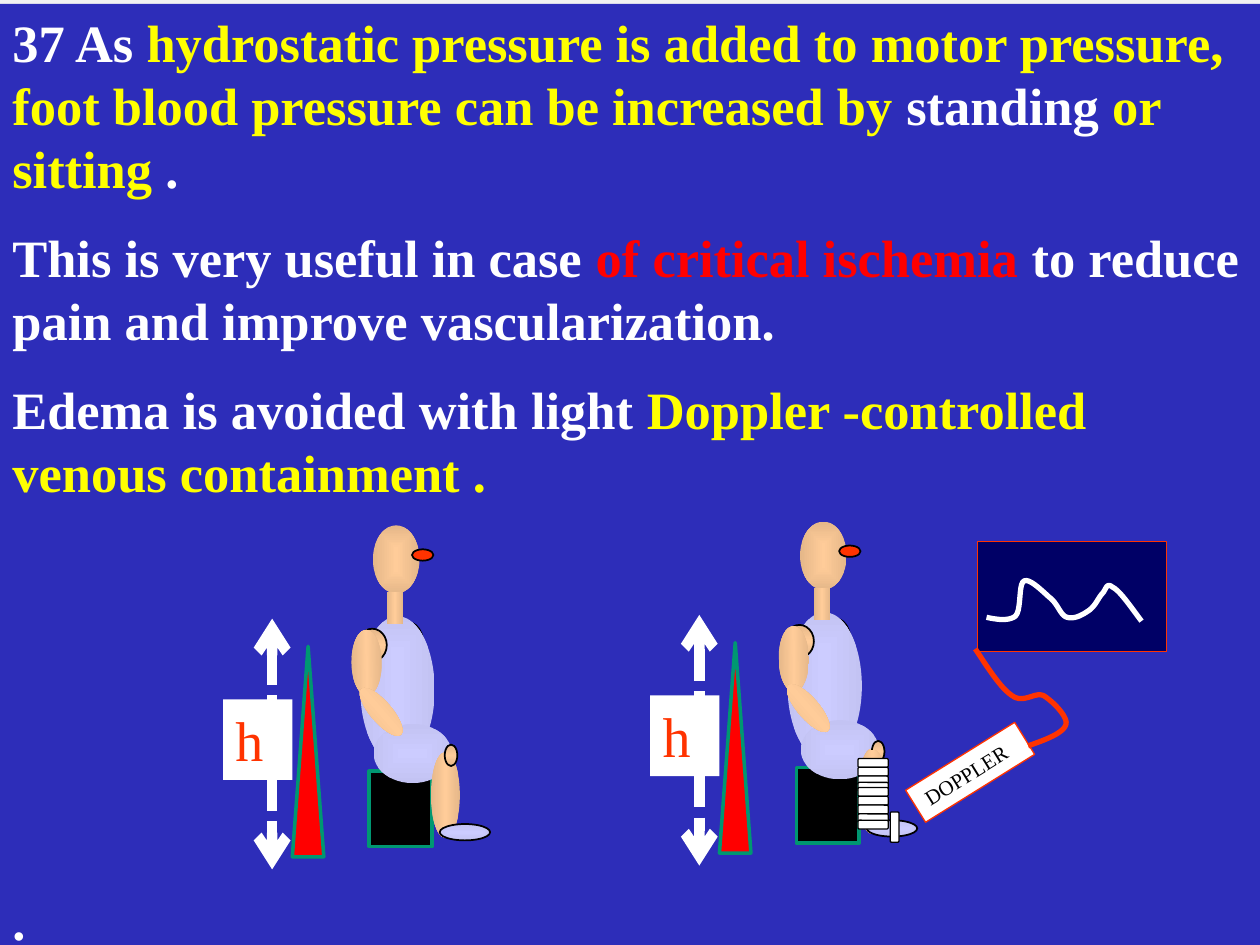
from pptx import Presentation
from pptx.dml.color import RGBColor
from pptx.enum import dml, shapes, text
from pptx.oxml import parse_xml
from pptx.oxml.ns import qn
from pptx.util import Cm, Pt

NS = 'xmlns:a="http://schemas.openxmlformats.org/drawingml/2006/main"'
INCH = 2.54
FONT = "Times New Roman"
HEX = {"page": "F2F2F2", "blue": "2D2DB9", "white": "FFFFFF", "yellow": "FFFF00",
       "red": "FF0000", "flame": "FF3300", "black": "000000", "green": "009771",
       "mint": "00CC99", "navy": "000066", "skin": "FFCC99", "tan": "E5B789",
       "lilac": "CCCCFF", "mauve": "C3C3F3"}
RGB = {name: RGBColor.from_string(code) for name, code in HEX.items()}

# Gradients: colour stops, then the way they run
ACROSS, DOWN = '<a:lin ang="0" scaled="1"/>', '<a:lin ang="5400000" scaled="1"/>'
ROUND = ('<a:path path="shape"><a:fillToRect l="50000" t="50000" '
         'r="50000" b="50000"/></a:path>')
GRADS = {"limb": (["tan", "skin", "tan"], ACROSS),
         "joint": (["tan", "skin", "tan"], DOWN),
         "face": (["skin", "tan"], ROUND),
         "cloth": (["lilac", "mauve"], ROUND)}

KIND = shapes.MSO_SHAPE
RECT, OVAL, BAND = KIND.RECTANGLE, KIND.OVAL, KIND.ROUNDED_RECTANGLE


def part(home, kind, box, fill, line=None, width=1, turn=0, word=None, size=12, ink="black"):
    """Add a shape; box is left, top, width, height in inches."""
    item = home.add_shape(kind, *[Cm(v * INCH) for v in box])
    item.shadow.inherit = False
    item.rotation = turn
    if fill in GRADS:
        names, way = GRADS[fill]
        stops = "".join(
            f'<a:gs pos="{100000 * i // (len(names) - 1)}"><a:srgbClr val="{HEX[n]}"/></a:gs>'
            for i, n in enumerate(names))
        item.fill.background()
        prop = item._element.spPr
        prop.replace(prop.find(qn("a:noFill")), parse_xml(
            f'<a:gradFill {NS} rotWithShape="1"><a:gsLst>{stops}</a:gsLst>{way}</a:gradFill>'))
    elif fill == "stripes":
        item.fill.patterned()
        item.fill.pattern = dml.MSO_PATTERN.DARK_HORIZONTAL
        item.fill.fore_color.rgb, item.fill.back_color.rgb = RGB["mint"], RGB["white"]
    else:
        item.fill.solid()
        item.fill.fore_color.rgb = RGB[fill]
    if line:
        item.line.color.rgb = RGB[line]
        item.line.width = Pt(width)
    else:
        item.line.fill.background()
    if word:
        frame = item.text_frame
        frame.word_wrap = False
        frame.vertical_anchor = text.MSO_ANCHOR.TOP
        para = frame.paragraphs[0]
        para.alignment = text.PP_ALIGN.LEFT
        run = para.add_run()
        run.text = word
        run.font.name, run.font.size, run.font.color.rgb = FONT, Pt(size), RGB[ink]
    return item


def curve(home, start, bends, line, fill=None):
    """Draw an open outline through cubic bends, each two controls and an end."""
    dots = []
    here = start
    for one, two, end in bends:
        for step in range(1, 11):
            t = step / 10
            s = 1 - t
            dots.append([Cm(INCH * (s**3 * a + 3 * s * s * t * b + 3 * s * t * t * c + t**3 * d))
                         for a, b, c, d in zip(here, one, two, end)])
        here = end
    pen = home.build_freeform(*[Cm(v * INCH) for v in start])
    pen.add_line_segments(dots, close=False)
    item = pen.convert_to_shape()
    item.shadow.inherit = False
    item.line.color.rgb = RGB[line]
    item.line.width = Pt(3)
    if fill:
        item.fill.solid()
        item.fill.fore_color.rgb = RGB[fill]
    else:
        item.fill.background()


deck = Presentation()
deck.slide_width, deck.slide_height = Cm(25.4), Cm(19.05)
slide = deck.slides.add_slide(deck.slide_layouts[6])
slide.background.fill.solid()
slide.background.fill.fore_color.rgb = RGB["page"]
top = slide.shapes

# Blue panel with the message
panel = part(top, RECT, (0, 0.03, 10, 7.85), "blue")
frame = panel.text_frame
frame.word_wrap = True
frame.vertical_anchor = text.MSO_ANCHOR.TOP
paras = [
    (0, [("37 As ", "white"),
         ("hydrostatic pressure is added to motor pressure, "
          "foot blood pressure can be increased by ", "yellow"),
         ("standing ", "white"), ("or sitting ", "yellow"), (".", "white")]),
    (15, [("This is very useful in case ", "white"), ("of critical ischemia ", "red"),
          ("to reduce pain and improve vascularization.", "white")]),
    (15, [("Edema is avoided with light ", "white"),
          ("Doppler -controlled venous containment .", "yellow")]),
    (220, [(".", "white")]),
]
for i, (gap, runs) in enumerate(paras):
    para = frame.add_paragraph() if i else frame.paragraphs[0]
    para.alignment = text.PP_ALIGN.LEFT
    para.space_before = Pt(gap)
    for words, ink in runs:
        run = para.add_run()
        run.text = words
        font = run.font
        font.name, font.size, font.bold, font.color.rgb = FONT, Pt(30), True, RGB[ink]

# Two seated patients, each with a pressure wedge and a height arrow
body = [
    (RECT, (2.93, 6.12, 0.5, 0.6), "black", "green", 2),  # stool
    (OVAL, (3.13, 4.94, 0.23, 0.34), "stripes", "black"),
    (OVAL, (2.96, 4.17, 0.37, 0.54), "face"),
    (OVAL, (2.86, 4.89, 0.59, 1.17), "cloth"),  # trunk
    (RECT, (3.07, 4.7, 0.13, 0.25), "limb"),  # neck
    (OVAL, (3.04, 5.67, 0.47, 0.62), "cloth", None, 1, 270),  # hip
    (OVAL, (3.42, 5.97, 0.23, 0.68), "limb"),  # leg
    (OVAL, (3.49, 6.54, 0.4, 0.13), "cloth", "black"),  # foot
    (OVAL, (3.53, 5.91, 0.1, 0.17), "joint", "black"),  # knee
    (OVAL, (2.84, 4.99, 0.23, 0.26), "joint", "black"),  # shoulder
    (OVAL, (2.79, 5, 0.24, 0.52), "limb", None, 1, 359.2),
    (OVAL, (2.94, 5.41, 0.17, 0.48), "limb", None, 1, 319.2),
    (OVAL, (3.27, 4.36, 0.17, 0.09), "flame", "black"),  # mouth
]
for dx, dy in [(0, 0), (3.39, -0.03)]:
    group = top.add_group_shape().shapes
    for kind, (x, y, w, h), *look in body:
        part(group, kind, (x + dx, y + dy, w, h), *look)
    part(top, KIND.FLOWCHART_MERGE, (2.32 + dx, 5.13 + dy, 0.25, 1.67), "red", "green", 2, 180)
    ends = (2.16 + dx, 4.91 + dy, 2.16 + dx, 6.9 + dy)
    arrow = top.add_connector(shapes.MSO_CONNECTOR.STRAIGHT, *[Cm(v * INCH) for v in ends])
    arrow.line.color.rgb = RGB["white"]
    arrow.line.width = Pt(6)
    arrow.line.dash_style = dml.MSO_LINE.SQUARE_DOT
    for tip in ("headEnd", "tailEnd"):
        arrow.line._get_or_add_ln().append(parse_xml(f'<a:{tip} {NS} type="arrow"/>'))
    arrow._element.spPr.append(parse_xml(f"<a:effectLst {NS}/>"))
    part(top, RECT, (1.77 + dx, 5.55 + dy, 0.55, 0.64), "white", word="h", size=32, ink="flame")

# Bandaged leg
wrap = top.add_group_shape().shapes
part(wrap, OVAL, (6.81, 5.95, 0.23, 0.63), "limb")
for y in (6.02, 6.09, 6.16, 6.21, 6.25, 6.32, 6.39, 6.46, 6.51):
    part(wrap, BAND, (6.81, y, 0.24, 0.07), "white", "black", 0.75)
part(top, BAND, (6.98, 6.53, 0.24, 0.07), "white", "black", 0.75, 90)

# Doppler screen, trace, probe and cable
scan = top.add_group_shape().shapes
part(scan, RECT, (7.76, 4.3, 1.5, 0.87), "navy", "flame", 0.75)
curve(scan, (7.83, 4.9), [
    ((7.92, 4.92), (8.01, 4.93), (8.06, 4.89)),
    ((8.11, 4.84), (8.08, 4.63), (8.13, 4.61)),
    ((8.18, 4.59), (8.29, 4.71), (8.34, 4.75)),
    ((8.4, 4.8), (8.42, 4.89), (8.47, 4.9)),
    ((8.53, 4.92), (8.61, 4.87), (8.65, 4.84)),
    ((8.7, 4.8), (8.72, 4.74), (8.75, 4.71)),
    ((8.78, 4.68), (8.78, 4.62), (8.83, 4.66)),
    ((8.89, 4.69), (8.97, 4.81), (9.06, 4.93))], "white", "navy")
part(scan, RECT, (7.19, 5.98, 1.02, 0.3), "white", "flame", 0.75, 328.1, "DOPPLER")
curve(scan, (8.16, 5.92), [
    ((8.3, 5.87), (8.44, 5.82), (8.46, 5.75)),
    ((8.48, 5.69), (8.35, 5.56), (8.28, 5.52)),
    ((8.21, 5.49), (8.12, 5.59), (8.03, 5.52)),
    ((7.94, 5.46), (7.84, 5.3), (7.74, 5.15))], "flame")

deck.save("out.pptx")
